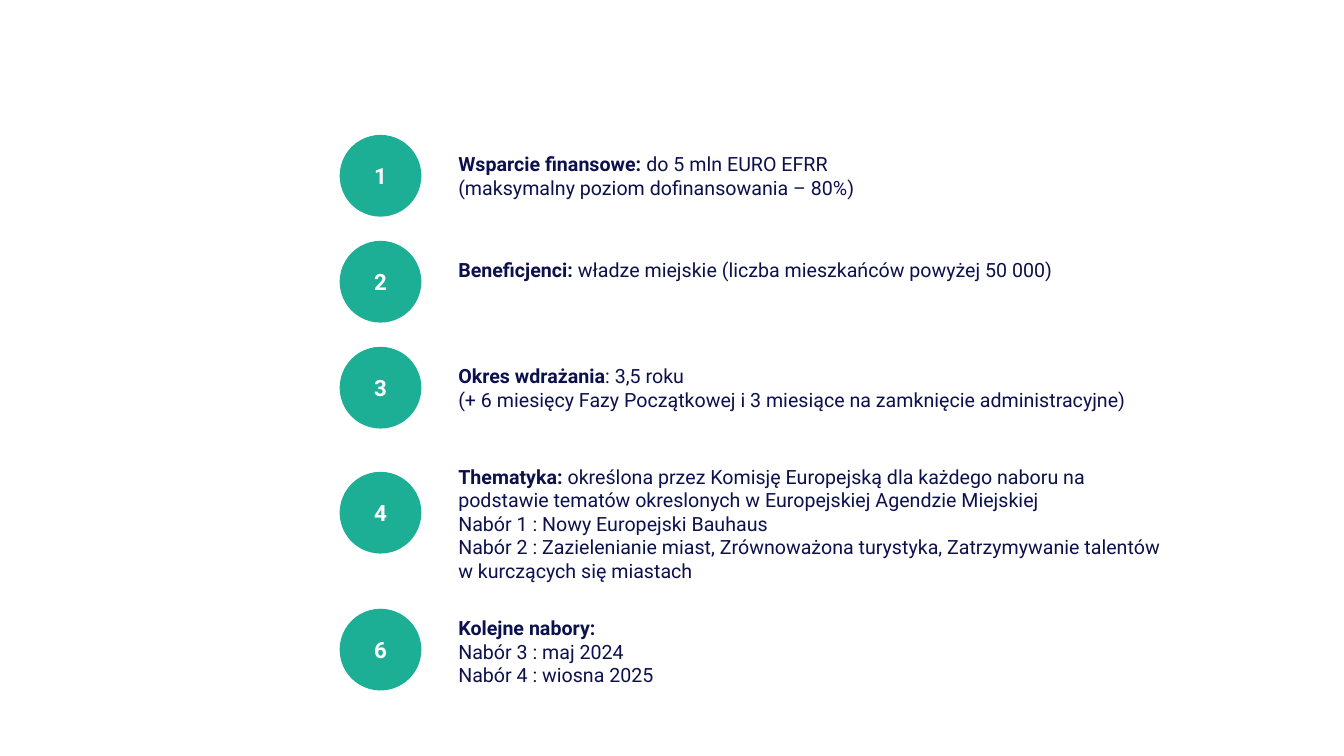
from pptx import Presentation
from pptx.dml.color import RGBColor
from pptx.enum.shapes import MSO_SHAPE
from pptx.enum.text import MSO_ANCHOR, MSO_AUTO_SIZE, PP_ALIGN
from pptx.util import Cm, Pt

GREEN = RGBColor(0x1C, 0xAF, 0x96)
NAVY = RGBColor(0x0C, 0x11, 0x4D)
WHITE = RGBColor(0xFF, 0xFF, 0xFF)
FONT = "Roboto"

CIRCLE_LEFT, CIRCLE_SIZE = 8.56, 2.06
TEXT_LEFT = 11.3
LINE_HEIGHT, TEXT_PADDING = 0.6, 0.26

# number, circle top, text top, text width, line count, heading, rest of the text
ITEMS = [
    ("1", 3.4, 3.71, 14, 2, "Wsparcie finansowe: ",
     ["do 5 mln EURO EFRR", "(maksymalny poziom dofinansowania – 80%)"]),
    ("2", 6.07, 6.38, 16.71, 1, "Beneficjenci: ",
     ["władze miejskie (liczba mieszkańców powyżej 50 000)"]),
    ("3", 8.74, 9.05, 20.68, 2, "Okres wdrażania",
     [": 3,5 roku",
      "(+ 6 miesięcy Fazy Początkowej i 3 miesiące na zamknięcie administracyjne)"]),
    ("4", 11.89, 11.58, 18.62, 5, "Thematyka: ",
     ["określona przez Komisję Europejską dla każdego naboru na podstawie "
      "tematów okreslonych w Europejskiej Agendzie Miejskiej",
      "Nabór 1 : Nowy Europejski Bauhaus",
      "Nabór 2 : Zazielenianie miast, Zrównoważona turystyka, "
      "Zatrzymywanie talentów w kurczących się miastach"]),
    ("6", 15.34, 15.4, 14, 3, "Kolejne nabory:",
     ["", "Nabór 3 : maj 2024", "Nabór 4 : wiosna 2025"]),
]


def format_run(r, size, color, bold=False):
    """Apply the slide font to a run."""
    r.font.name = FONT
    r.font.size = Pt(size)
    r.font.bold = bold
    r.font.color.rgb = color


def add_circle(shapes, number, top):
    """Add a numbered green circle."""
    sp = shapes.add_shape(MSO_SHAPE.OVAL, Cm(CIRCLE_LEFT), Cm(top),
                          Cm(CIRCLE_SIZE), Cm(CIRCLE_SIZE))
    sp.shadow.inherit = False
    sp.fill.solid()
    sp.fill.fore_color.rgb = GREEN
    sp.line.fill.background()
    tf = sp.text_frame
    tf.text = number
    tf.vertical_anchor = MSO_ANCHOR.MIDDLE
    p = tf.paragraphs[0]
    p.alignment = PP_ALIGN.CENTER
    format_run(p.runs[0], 16, WHITE, bold=True)


def add_description(shapes, top, width, lines, heading, paragraphs):
    """Add a text box that opens with a bold heading."""
    sp = shapes.add_textbox(Cm(TEXT_LEFT), Cm(top), Cm(width),
                            Cm(lines * LINE_HEIGHT + TEXT_PADDING))
    tf = sp.text_frame
    tf.word_wrap = True
    tf.auto_size = MSO_AUTO_SIZE.SHAPE_TO_FIT_TEXT
    p = tf.paragraphs[0]
    p.text = heading
    format_run(p.runs[0], 14, NAVY, bold=True)
    first, *others = paragraphs
    if first:
        r = p.add_run()
        r.text = first
        format_run(r, 14, NAVY)
    for text in others:
        p = tf.add_paragraph()
        p.text = text
        format_run(p.runs[0], 14, NAVY)


def main():
    """Build the slide and save it."""
    prs = Presentation()
    prs.slide_width, prs.slide_height = Cm(33.87), Cm(19.05)
    s = prs.slides.add_slide(prs.slide_layouts[6])
    for number, circle_top, *description in ITEMS:
        group = s.shapes.add_group_shape()
        add_circle(group.shapes, number, circle_top)
        add_description(group.shapes, *description)
    prs.save("out.pptx")


if __name__ == "__main__":
    main()
